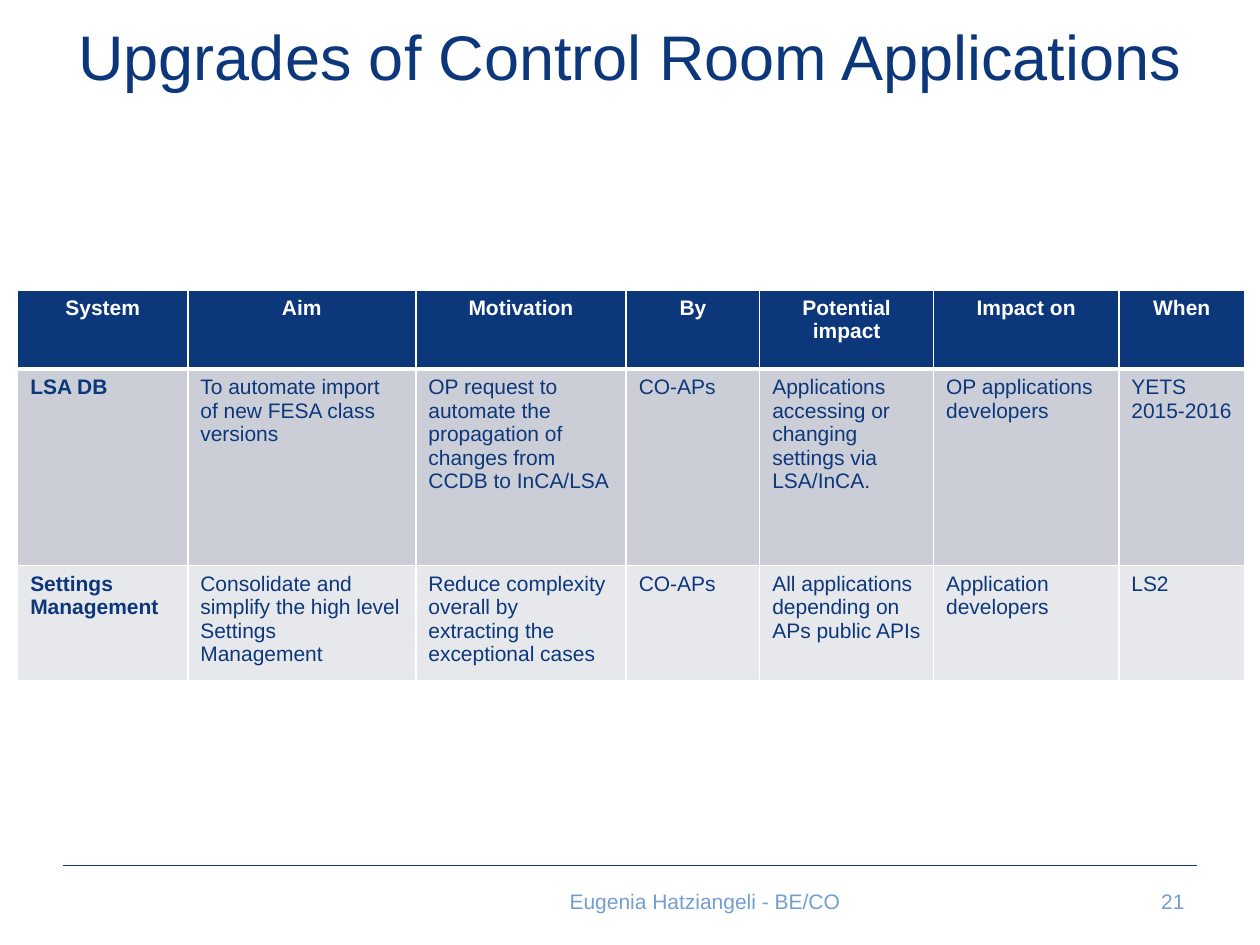
from lxml.etree import SubElement
from pptx import Presentation
from pptx.dml.color import RGBColor
from pptx.enum.text import MSO_ANCHOR, MSO_AUTO_SIZE, PP_ALIGN
from pptx.enum.shapes import MSO_CONNECTOR
from pptx.oxml.ns import qn
from pptx.util import Inches, Pt

NAVY = RGBColor(0x0C, 0x37, 0x7B)
SKY = RGBColor(0x72, 0x9F, 0xCF)
WHITE = RGBColor(0xFF, 0xFF, 0xFF)
GREY = RGBColor(0xCC, 0xCE, 0xD7)
PALE = RGBColor(0xE7, 0xE8, 0xEC)

COLUMN_WIDTHS = [1.35, 1.81, 1.67, 1.06, 1.38, 1.47, 1]
ROW_HEIGHTS = [0.63, 1.56, 0.91]
ROW_FILLS = [NAVY, GREY, PALE]
UPGRADES = [
    ["System", "Aim", "Motivation", "By", "Potential impact", "Impact on", "When"],
    ["LSA DB", "To automate import of new FESA class versions",
     "OP request to automate the propagation of changes from CCDB to InCA/LSA",
     "CO-APs", "Applications accessing or changing settings via LSA/InCA.",
     "OP applications developers", "YETS 2015-2016"],
    ["Settings Management",
     "Consolidate and simplify the high level Settings Management",
     "Reduce complexity overall by extracting the exceptional cases",
     "CO-APs", "All applications depending on APs public APIs",
     "Application developers", "LS2"],
]


class SlideBuilder:
    """Holds the text style and the current slide."""

    font_name = "Arial"

    def __init__(self, slide):
        self.slide = slide

    def set_text(self, frame, text, size, color, align=PP_ALIGN.LEFT, bold=False):
        paragraph = frame.paragraphs[0]
        paragraph.text = text
        paragraph.alignment = align
        style = {"name": self.font_name, "size": Pt(size), "bold": bold}
        for attribute, value in style.items():
            setattr(paragraph.font, attribute, value)
        paragraph.font.color.rgb = color

    def set_frame(self, frame, **extra):
        layout = {"word_wrap": True, "auto_size": MSO_AUTO_SIZE.NONE,
                  "vertical_anchor": MSO_ANCHOR.MIDDLE, **extra}
        for attribute, value in layout.items():
            setattr(frame, attribute, value)

    def title(self, text, left, top, width, height):
        heading = self.slide.shapes.title
        box = {"left": left, "top": top, "width": width, "height": height}
        for attribute, value in box.items():
            setattr(heading, attribute, Inches(value))
        inset = Inches(0.05)
        self.set_frame(heading.text_frame, margin_left=inset, margin_right=inset,
                       margin_top=inset, margin_bottom=inset)
        self.set_text(heading.text_frame, text, 36, NAVY, PP_ALIGN.CENTER)

    def footer(self, text, left, width, align):
        note = self.slide.shapes.add_textbox(
            Inches(left), Inches(6.95), Inches(width), Inches(0.4))
        self.set_frame(note.text_frame)
        self.set_text(note.text_frame, text, 12, SKY, align)

    def rule(self, left, right, y):
        line = self.slide.shapes.add_connector(
            MSO_CONNECTOR.STRAIGHT, Inches(left), Inches(y), Inches(right), Inches(y))
        line.line.color.rgb = NAVY
        line.line.width = Pt(0.5)
        SubElement(line._element.spPr, qn("a:effectLst"))

    def cell_borders(self, cell, **widths):
        properties = cell._tc.get_or_add_tcPr()
        for side, width in widths.items():
            border = SubElement(properties, qn(f"a:ln{side}"), w=str(Pt(width)))
            fill = SubElement(border, qn("a:solidFill"))
            SubElement(fill, qn("a:srgbClr"), val=str(WHITE))

    def table(self, rows, left, top):
        table = self.slide.shapes.add_table(
            len(rows), len(COLUMN_WIDTHS), Inches(left), Inches(top),
            Inches(sum(COLUMN_WIDTHS)), Inches(sum(ROW_HEIGHTS))).table
        for column, width in zip(table.columns, COLUMN_WIDTHS):
            column.width = Inches(width)
        for row, height in zip(table.rows, ROW_HEIGHTS):
            row.height = Inches(height)
        for r, texts in enumerate(rows):
            header = r == 0
            for c, text in enumerate(texts):
                cell = table.cell(r, c)
                # Thick line between the header and the body
                self.cell_borders(cell, L=1, R=1, T=3 if r == 1 else 1,
                                  B=3 if header else 1)
                cell.fill.solid()
                cell.fill.fore_color.rgb = ROW_FILLS[r]
                self.set_text(cell.text_frame, text, 12, WHITE if header else NAVY,
                              PP_ALIGN.CENTER if header else PP_ALIGN.LEFT,
                              bold=header or c == 0)


def main():
    presentation = Presentation()
    presentation.slide_width = Inches(10)
    presentation.slide_height = Inches(7.5)
    title_only = presentation.slide_layouts[5]
    builder = SlideBuilder(presentation.slides.add_slide(title_only))

    # Heading
    builder.title("Upgrades of Control Room Applications", 0.5, 0.05, 9, 0.78)

    # Planned upgrades
    builder.table(UPGRADES, 0.14, 2.3)

    # Footer
    builder.rule(0.5, 9.5, 6.87)
    builder.footer("Eugenia Hatziangeli - BE/CO", 2.49, 6.21, PP_ALIGN.CENTER)
    builder.footer("21", 8.7, 0.8, PP_ALIGN.RIGHT)

    presentation.save("out.pptx")


if __name__ == "__main__":
    main()
